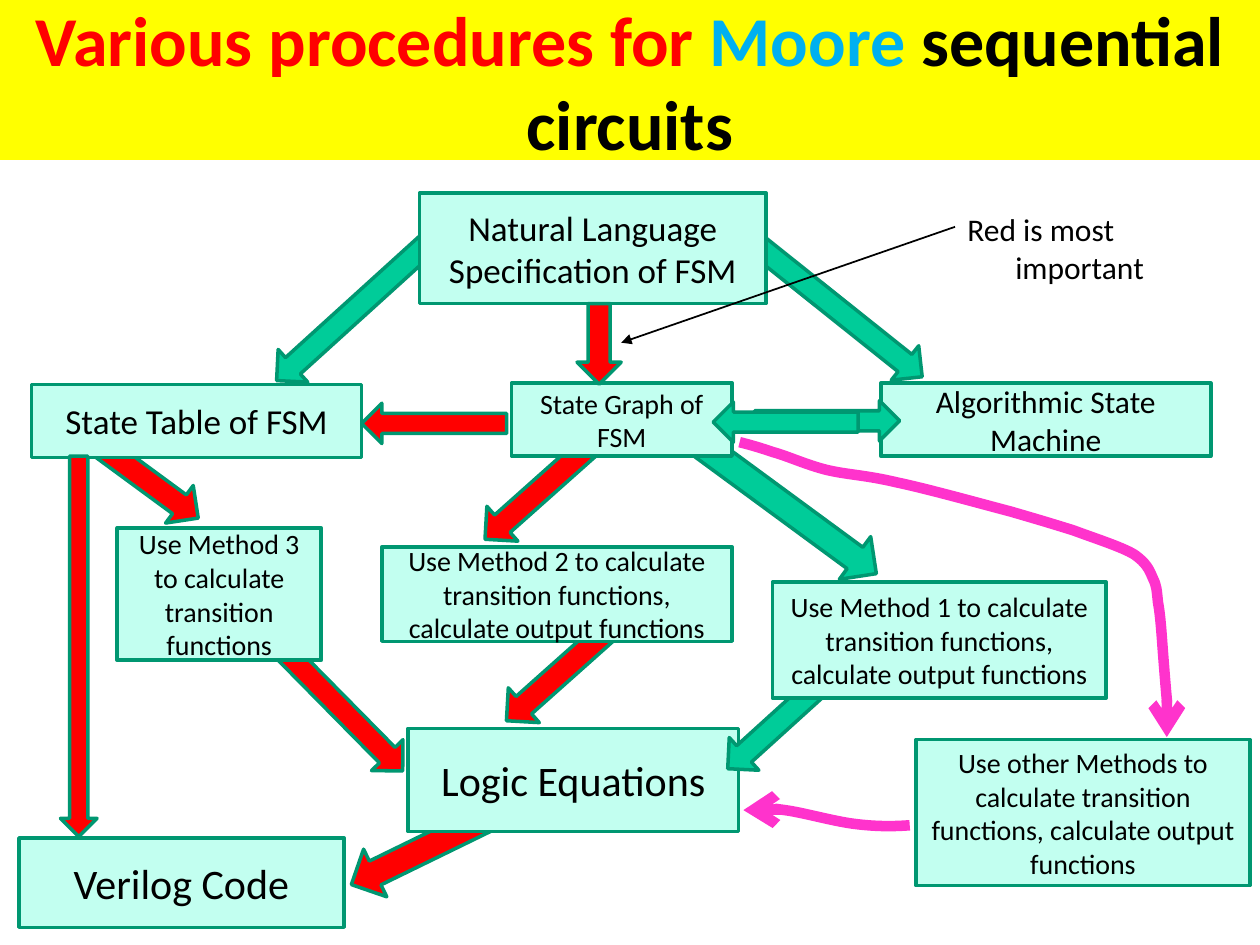
from itertools import chain
from lxml.etree import SubElement as Sub
from pptx import Presentation
from pptx.dml.color import RGBColor as Rgb
from pptx.enum.shapes import MSO_CONNECTOR as Link, MSO_SHAPE as Kind
from pptx.enum.text import MSO_ANCHOR as Anchor, PP_ALIGN as Align
from pptx.oxml.ns import qn
from pptx.util import Inches, Pt

HUES = {"red": "FF0000", "green": "00CC99", "edge": "009771", "mint": "C2FFF0",
        "pink": "FF33CC", "yellow": "FFFF00", "blue": "00B0F0", "black": "000000"}

TITLE = [("Various procedures for ", "red"), ("Moore ", "blue"),
         ("sequential circuits", "black")]
NOTE = "Red is most important"
TASK = "to calculate transition functions"
FULL = TASK + ", calculate output functions"

# Boxes: text, size, left, top, width, height
BOXES = [
    ("Use Method 3 " + TASK, 16, 0.93, 4.19, 1.62, 1.05),
    ("State Graph of FSM", 16, 4.06, 3.04, 1.75, 0.58),
    ("Algorithmic State Machine", 18, 6.99, 3.04, 2.62, 0.58),
    ("Natural Language Specification of FSM", 20, 3.33, 1.53, 2.75, 0.88),
    ("Verilog Code", 24, 0.15, 6.65, 2.58, 0.71),
    ("State Table of FSM", 20, 0.25, 3.05, 2.62, 0.58),
    ("Logic Equations", 24, 3.24, 5.78, 2.62, 0.82),
    ("Use Method 2 " + FULL, 16, 3.03, 4.34, 2.78, 0.75),
]
TOP_BOXES = [
    ("Use Method 1 " + FULL, 16, 6.13, 4.62, 2.65, 0.92),
    ("Use other Methods " + FULL, 16, 7.27, 5.87, 2.65, 1.16),
]

# Arrows: kind, colour, turn, left, top, width, height
DOWN, RIGHT = Kind.DOWN_ARROW, Kind.RIGHT_ARROW
BACK = [
    (DOWN, "red", 48.3, 4.48, 4.28, 0.37, 1.73),
    (DOWN, "red", 315.4, 2.53, 4.92, 0.35, 1.4),
    (DOWN, "green", 306.3, 6, 3.08, 0.42, 1.85),
    (DOWN, "red", 48.3, 4.31, 2.84, 0.37, 1.73),
    (DOWN, "green", 308.6, 6.48, 1.61, 0.35, 1.7),
    (DOWN, "green", 47.8, 2.65, 1.6, 0.35, 1.7),
    (DOWN, "red", 306.3, 0.76, 2.87, 0.37, 1.56),
    (DOWN, "red", 64, 3.41, 5.69, 0.42, 1.85),
]
FRONT = [
    (DOWN, "red", 0, 4.58, 2.41, 0.35, 0.64),
    (RIGHT, "green", 0, 5.99, 3.18, 1.15, 0.32),
    (RIGHT, "red", 180, 2.87, 3.2, 1.15, 0.32),
    (RIGHT, "green", 180, 5.66, 3.19, 1.15, 0.32),
    (DOWN, "red", 0, 0.48, 3.62, 0.29, 3.02),
    (DOWN, "green", 47.8, 6.23, 4.68, 0.35, 1.7),
]

# Curves in hundredths of an inch: a start, then three points for each Bezier piece
CURVES = [
    [(587, 351),
     (595, 353), (602, 355), (614, 359), (625, 362), (640, 369), (656, 373),
     (673, 377), (687, 377), (712, 383), (736, 388), (779, 400), (802, 406),
     (826, 413), (836, 416), (852, 421), (868, 427), (890, 434), (900, 440),
     (910, 447), (912, 452), (915, 459), (918, 465), (918, 468), (919, 478),
     (921, 488), (922, 505), (923, 518), (924, 531), (925, 544), (926, 555),
     (926, 566), (926, 576), (926, 585)],
    [(722, 655),
     (709, 656), (695, 656), (679, 654), (662, 652), (638, 645), (623, 643),
     (609, 641), (600, 642), (590, 643)],
]


def hue(name):
    return Rgb.from_string(HUES[name])


def write(frame, runs, size, bold=False, align=Align.CENTER, anchor=Anchor.MIDDLE):
    frame.word_wrap = True
    frame.vertical_anchor = anchor
    para = frame.paragraphs[0]
    para.alignment = align
    for text, color in runs:
        run = para.add_run()
        run.text = text
        font = run.font
        font.name, font.size, font.bold = "Calibri", Pt(size), bold
        font.color.rgb = hue(color)
    return para


def stroke(part, color, width, head=None):
    part.line.color.rgb = hue(color)
    part.line.width = Pt(width)
    if head:
        Sub(part.line._get_or_add_ln(), qn("a:tailEnd"), type=head)


def add(shapes, kind, fill, place):
    part = shapes.add_shape(kind, *map(Inches, place))
    part.shadow.inherit = False
    part.fill.solid()
    part.fill.fore_color.rgb = hue(fill)
    stroke(part, "edge", 2)
    return part


def arrows(shapes, rows):
    for kind, fill, turn, *place in rows:
        add(shapes, kind, fill, place).rotation = turn


def boxes(shapes, rows):
    for text, size, *place in rows:
        box = add(shapes, Kind.RECTANGLE, "mint", place)
        write(box.text_frame, [(text, "black")], size)


def curve(shapes, points):
    start, *rest = points
    pen = shapes.build_freeform(*start, scale=Inches(0.01))
    pen.add_line_segments(rest, close=False)
    part = pen.convert_to_shape()
    part.shadow.inherit = False
    part.fill.background()
    stroke(part, "pink", 6, "arrow")
    # Join each three straight pieces into one Bezier piece
    track = part._element.find(".//" + qn("a:path"))
    steps = track.findall(qn("a:lnTo"))
    for i in range(0, len(steps), 3):
        bend = Sub(track, qn("a:cubicBezTo"))
        bend.extend(list(chain.from_iterable(steps[i:i + 3])))
    for step in steps:
        track.remove(step)


def main():
    deck = Presentation()
    deck.slide_width, deck.slide_height = Inches(10), Inches(7.5)
    slide = deck.slides.add_slide(deck.slide_layouts[5])
    shapes = slide.shapes

    # Title band
    title = shapes.title
    title.left, title.top, title.width, title.height = map(Inches, (0, 0, 10, 1.27))
    title.fill.solid()
    title.fill.fore_color.rgb = hue("yellow")
    write(title.text_frame, TITLE, 40, bold=True)

    # Flow chart, from back to front
    arrows(shapes, BACK)
    boxes(shapes, BOXES)
    arrows(shapes, FRONT)
    boxes(shapes, TOP_BOXES)
    for points in CURVES:
        curve(shapes, points)

    # Note and its pointer
    line = shapes.add_connector(Link.STRAIGHT, *map(Inches, (7.58, 1.8, 4.93, 2.72)))
    stroke(line, "black", 1, "triangle")
    Sub(line._element.spPr, qn("a:effectLst"))
    note = shapes.add_textbox(*map(Inches, (7.58, 1.62, 2.03, 0.71)))
    para = write(note.text_frame, [(NOTE, "black")], 18,
                 align=Align.LEFT, anchor=Anchor.TOP)
    para.space_before = Pt(3.6)
    props = para._p.get_or_add_pPr()
    props.set("marL", str(Inches(0.38)))
    props.set("indent", str(-Inches(0.38)))

    deck.save("out.pptx")


if __name__ == "__main__":
    main()
